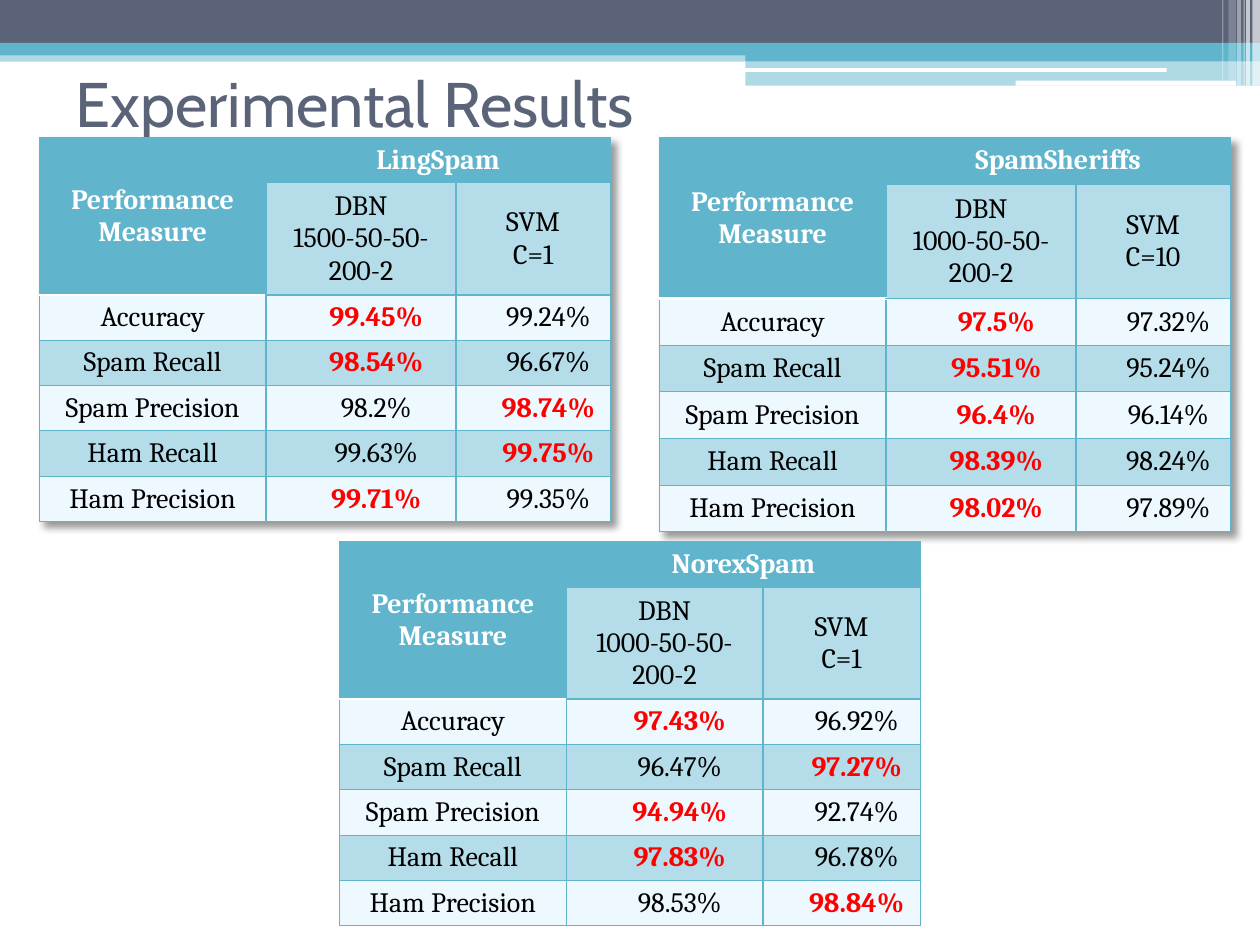
from lxml.etree import SubElement
from pptx import Presentation
from pptx.dml.color import RGBColor
from pptx.enum.shapes import MSO_SHAPE
from pptx.enum.text import MSO_ANCHOR, PP_ALIGN
from pptx.oxml import parse_xml
from pptx.oxml.ns import nsdecls, qn
from pptx.util import Pt

TEAL = RGBColor(0x60, 0xB5, 0xCC)
SLATE = RGBColor(0x5A, 0x63, 0x78)
WHITE = RGBColor(0xFF, 0xFF, 0xFF)
BLACK = RGBColor(0x00, 0x00, 0x00)
RED = RGBColor(0xFF, 0x00, 0x00)
PALE = RGBColor(0xED, 0xF9, 0xFF)
TINT = RGBColor(0xB5, 0xDD, 0xE9)

RECT, ROUND = MSO_SHAPE.RECTANGLE, MSO_SHAPE.ROUNDED_RECTANGLE
# kind, left, top, width, height, colour, opacity in percent
BARS = [
    (RECT, 0, 28.8, 720, 6.5, TEAL, 50),
    (RECT, 0, 0, 720, 24.5, SLATE, 100),
    (RECT, 0, 24.5, 720, 7.2, TEAL, 100),
    (RECT, 426, 28, 294, 6.8, TEAL, 100),
    (RECT, 426, 34.6, 294, 14.4, TEAL, 50),
    (ROUND, 425.5, 38.9, 241.2, 2.2, WHITE, 100),
    (ROUND, 580.3, 46.1, 126, 2.9, WHITE, 100),
    (RECT, 715.7, 0, 4.3, 49, WHITE, 65),
    (RECT, 712.1, 0, 2.2, 49, WHITE, 65),
    (RECT, 710.6, 0, 0.72, 49, WHITE, 60),
    (RECT, 707, 0, 2.2, 49, WHITE, 40),
    (RECT, 702, 0, 4.3, 46.1, WHITE, 20),
    (RECT, 698.4, 0, 0.72, 46.1, WHITE, 30),
]

ROWS = ["Accuracy", "Spam Recall", "Spam Precision", "Ham Recall", "Ham Precision"]
TABLES = [
    dict(name="LingSpam", net="1500-50-50-200-2", cost="C=1", at=(22.4, 78.5),
         cols=(129.6, 108.7, 88), row=25.92, head=64.1, shadow=True,
         data=[(99.45, 99.24), (98.54, 96.67), (98.2, 98.74),
               (99.63, 99.75), (99.71, 99.35)]),
    dict(name="SpamSheriffs", net="1000-50-50-200-2", cost="C=10", at=(376.7, 78.5),
         cols=(129.6, 108.7, 88), row=26.65, head=65.5, shadow=True,
         data=[(97.5, 97.32), (95.51, 95.24), (96.4, 96.14),
               (98.39, 98.24), (98.02, 97.89)]),
    dict(name="NorexSpam", net="1000-50-50-200-2", cost="C=1", at=(194, 309.5),
         cols=(129.6, 112.3, 90), row=25.92, head=64.1, shadow=False,
         data=[(97.43, 96.92), (96.47, 97.27), (94.94, 92.74),
               (97.83, 96.78), (98.53, 98.84)]),
]


def add_bar(slide, kind, left, top, width, height, color, alpha):
    bar = slide.shapes.add_shape(kind, Pt(left), Pt(top), Pt(width), Pt(height))
    bar.shadow.inherit = False
    bar.line.fill.background()
    bar.fill.solid()
    bar.fill.fore_color.rgb = color
    if alpha < 100:
        tone = next(bar.element.iter(qn("a:srgbClr")))
        SubElement(tone, qn("a:alpha"), val=str(alpha * 1000))


def write(cell, lines, color=BLACK, bold=False, indent=0):
    cell.vertical_anchor = MSO_ANCHOR.MIDDLE
    frame = cell.text_frame
    frame.text = "\n".join(lines)
    look = dict(size=Pt(16), name="Cambria", bold=bold)
    for para in frame.paragraphs:
        para.alignment = PP_ALIGN.CENTER
        if indent:
            para._p.get_or_add_pPr().set("indent", str(Pt(indent)))
        font = para.runs[0].font
        for key, value in look.items():
            setattr(font, key, value)
        font.color.rgb = color


def paint(cell, color):
    cell.fill.solid()
    cell.fill.fore_color.rgb = color


def add_edges(cell, row, col):
    """Thin teal lines, thicker inside, white under the row header."""
    thick = {
        "L": row > 0 and col == 2,
        "R": row > 0 and col == 1,
        "T": col > 0 and row in (1, 2),
        "B": col > 0 and row < 2,
    }
    props = cell._tc.get_or_add_tcPr()
    for spot, (side, wide) in enumerate(thick.items()):
        color, width = TEAL, 1 if wide else 0.75
        if col == 0 and (row, side) in ((0, "B"), (1, "B"), (2, "T")):
            color, width = WHITE, 1.5
        props.insert(spot, parse_xml(
            f'<a:ln{side} {nsdecls("a")} w="{Pt(width)}"><a:solidFill>'
            f'<a:srgbClr val="{color}"/></a:solidFill></a:ln{side}>'))


def add_shade(table):
    table._tbl.tblPr.insert(0, parse_xml(
        f'<a:effectLst {nsdecls("a")}><a:outerShdw blurRad="{Pt(4)}" '
        f'dist="{Pt(4)}" dir="2700000" algn="tl"><a:srgbClr val="000000">'
        '<a:alpha val="40000"/></a:srgbClr></a:outerShdw></a:effectLst>'))


def add_scores(slide, item):
    tall = [item["row"], item["head"]] + [item["row"]] * len(ROWS)
    left, top = item["at"]
    table = slide.shapes.add_table(
        len(tall), 3, Pt(left), Pt(top), Pt(sum(item["cols"])), Pt(sum(tall))).table
    for col, width in zip(table.columns, item["cols"]):
        col.width = Pt(width)
    for row, height in zip(table.rows, tall):
        row.height = Pt(height)

    table.cell(0, 0).merge(table.cell(1, 0))
    table.cell(0, 1).merge(table.cell(0, 2))
    write(table.cell(0, 0), ["Performance Measure"], WHITE, True)
    write(table.cell(0, 1), [item["name"]], WHITE, True)
    write(table.cell(1, 1), ["DBN", item["net"]])
    write(table.cell(1, 2), ["SVM", item["cost"]])

    for row, (label, pair) in enumerate(zip(ROWS, item["data"]), 2):
        write(table.cell(row, 0), [label])
        for col, value in enumerate(pair, 1):
            best = value == max(pair)
            cell = table.cell(row, col)
            cell.margin_left = cell.margin_right = Pt(5)
            cell.margin_top = cell.margin_bottom = 0
            write(cell, [f"{value}%"], RED if best else BLACK, best, 17.3)

    for row in range(len(tall)):
        for col in range(3):
            cell = table.cell(row, col)
            head = row == 0 or (row == 1 and col == 0)
            paint(cell, TEAL if head else TINT if row % 2 else PALE)
            add_edges(cell, row, col)
    if item["shadow"]:
        add_shade(table)


def add_title(slide, text):
    title = slide.shapes.title
    title.element.getparent().append(title.element)  # in front of the bars
    place = dict(left=36, top=16.6, width=648, height=84.2)
    for key, value in place.items():
        setattr(title, key, Pt(value))
    frame = title.text_frame
    frame.text = text
    frame.vertical_anchor = MSO_ANCHOR.MIDDLE
    para = frame.paragraphs[0]
    para.alignment = PP_ALIGN.LEFT
    for key, value in dict(name="Cabin", size=Pt(36)).items():
        setattr(para.runs[0].font, key, value)
    para.runs[0].font.color.rgb = SLATE


def main():
    deck = Presentation()
    deck.slide_width, deck.slide_height = Pt(720), Pt(540)
    slide = deck.slides.add_slide(deck.slide_layouts[5])
    for bar in BARS:
        add_bar(slide, *bar)
    add_title(slide, "Experimental Results")
    for item in TABLES:
        add_scores(slide, item)
    deck.save("out.pptx")


if __name__ == "__main__":
    main()
